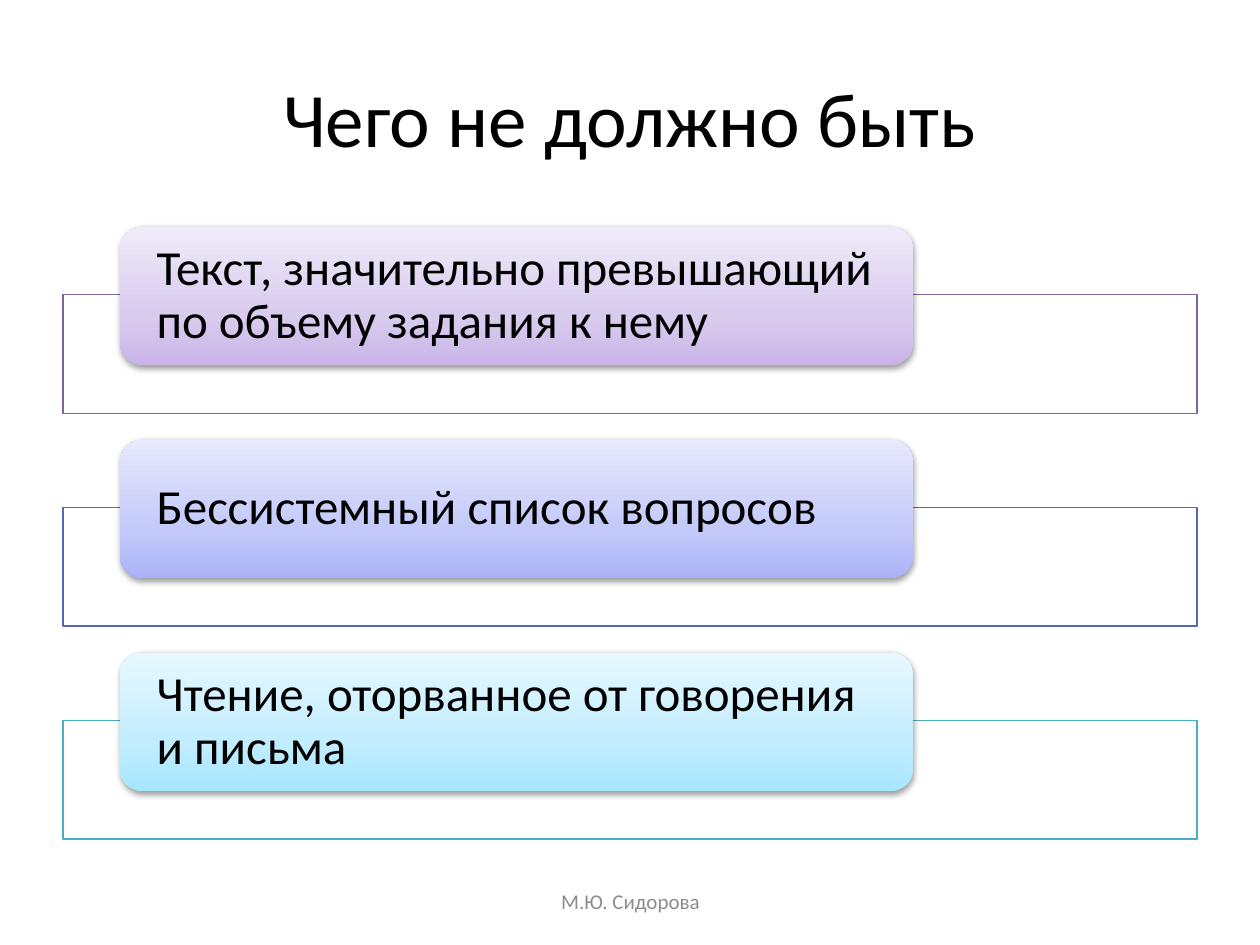
"""Build a slide with three labelled bars on what to avoid."""
import copy
import pptx
import pptx.dml.color
import pptx.enum.shapes
import pptx.enum.text
import pptx.oxml
import pptx.util

Inches, Pt = pptx.util.Inches, pptx.util.Pt
Shape = pptx.enum.shapes.MSO_SHAPE
Align = pptx.enum.text.PP_ALIGN
Anchor = pptx.enum.text.MSO_ANCHOR
rgb = pptx.dml.color.RGBColor.from_string

theme = {
    "font": "Calibri", "ink": "000000", "grey": "8C8C8C", "paper": "FFFFFF",
    "title": 44, "label": 28, "foot": 12,
    "bars": [
        ("8064A2", ("C9B5E8", "D8CBEE", "F0EAF9")),
        ("5767B4", ("A9B2F8", "C3C9F9", "E7E9FE")),
        ("4BACC6", ("A7E6FF", "C1EDFF", "E7F8FF")),
    ],
}
shadow = (
    '<a:effectLst xmlns:a="http://schemas.openxmlformats.org/drawingml/2006/main">'
    '<a:outerShdw blurRad="40000" dist="20000" dir="5400000" rotWithShape="0">'
    '<a:srgbClr val="000000"><a:alpha val="38000"/></a:srgbClr>'
    '</a:outerShdw></a:effectLst>'
)
labels = [
    "Текст, значительно превышающий по объему задания к нему",
    "Бессистемный список вопросов",
    "Чтение, оторванное от говорения и письма",
]


def write(shape, text, size, ink, align):
    frame = shape.text_frame
    frame.word_wrap = True
    frame.vertical_anchor = Anchor.MIDDLE
    frame.text = text
    line = frame.paragraphs[0]
    line.alignment = align
    line.font.name = theme["font"]
    line.font.size = Pt(theme[size])
    line.font.color.rgb = rgb(theme[ink])
    return frame


deck = pptx.Presentation()
deck.slide_width, deck.slide_height = Inches(10), Inches(7.5)
slide = deck.slides.add_slide(deck.slide_layouts[5])
shapes = slide.shapes

title = shapes.title
title.left, title.top = Inches(0.5), Inches(0.3)
title.width, title.height = Inches(9), Inches(1.25)
write(title, "Чего не должно быть", "title", "ink", Align.CENTER)

for row, (text, (edge, tones)) in enumerate(zip(labels, theme["bars"])):
    top = 1.8 + 1.69 * row
    bar = shapes.add_shape(Shape.RECTANGLE, Inches(0.5), Inches(top + 0.54),
                           Inches(9), Inches(0.94))
    bar.shadow.inherit = False
    bar.fill.solid()
    bar.fill.fore_color.rgb = rgb(theme["paper"])
    bar.line.color.rgb = rgb(edge)
    bar.line.width = Pt(0.75)

    pill = shapes.add_shape(Shape.ROUNDED_RECTANGLE, Inches(0.95), Inches(top),
                            Inches(6.3), Inches(1.1))
    pill.line.fill.background()
    pill.fill.gradient()
    pill.fill.gradient_angle = 90
    first = pill._element.spPr.xpath("a:gradFill/a:gsLst/a:gs")[0]
    first.addnext(copy.deepcopy(first))
    for stop, tone, place in zip(pill.fill.gradient_stops, tones, (0, 0.35, 1)):
        stop.color.rgb = rgb(tone)
        stop.position = place
    pill._element.spPr.append(pptx.oxml.parse_xml(shadow))
    frame = write(pill, text, "label", "ink", Align.LEFT)
    frame.margin_left = frame.margin_right = Inches(0.24)
    frame.margin_top = frame.margin_bottom = 0
    frame.paragraphs[0].line_spacing = 0.9

foot = shapes.add_textbox(Inches(3.42), Inches(6.95), Inches(3.17), Inches(0.4))
write(foot, "М.Ю. Сидорова", "foot", "grey", Align.CENTER)

deck.save("out.pptx")
